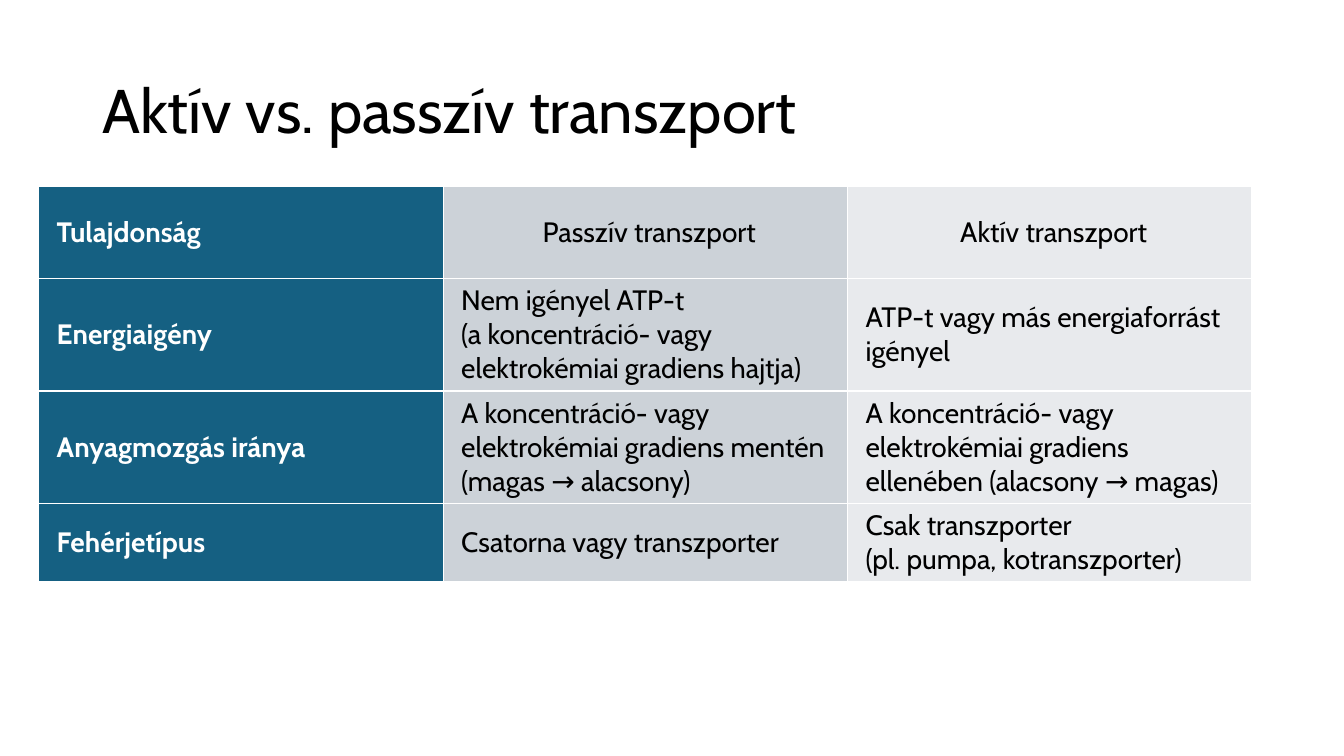
from lxml.etree import SubElement
from pptx import Presentation
from pptx.dml.color import RGBColor
from pptx.enum.text import MSO_ANCHOR, MSO_AUTO_SIZE, PP_ALIGN
from pptx.oxml.ns import qn
from pptx.util import Pt

FONT = "Cabin"
BLACK, WHITE = "000000", "FFFFFF"
COLUMN_FILLS = ["156082", "CCD2D8", "E8EAED"]
COLUMN_WIDTH = 288.9
ROW_HEIGHTS = [65.5, 59, 59, 47.5]
ROWS = [
    ["Tulajdonság", "Passzív transzport", "Aktív transzport"],
    [
        "Energiaigény",
        "Nem igényel ATP-t\n(a koncentráció- vagy elektrokémiai gradiens hajtja)",
        "ATP-t vagy más energiaforrást igényel",
    ],
    [
        "Anyagmozgás iránya",
        "A koncentráció- vagy elektrokémiai gradiens mentén (magas → alacsony)",
        "A koncentráció- vagy elektrokémiai gradiens ellenében (alacsony → magas)",
    ],
    [
        "Fehérjetípus",
        "Csatorna vagy transzporter",
        "Csak transzporter\n(pl. pumpa, kotranszporter)",
    ],
]


def color(value):
    return RGBColor.from_string(value)


def set_attributes(target, values):
    for name, value in values.items():
        setattr(target, name, value)


def format_paragraph(paragraph, size, text_color, bold=False, **layout):
    set_attributes(paragraph, layout)
    set_attributes(paragraph.font, {"name": FONT, "size": Pt(size), "bold": bold})
    paragraph.font.color.rgb = color(text_color)


def add_title(slide, text):
    title = slide.shapes.title
    set_attributes(title, {
        "left": Pt(66), "top": Pt(28.75), "width": Pt(828), "height": Pt(104.4),
    })
    frame = title.text_frame
    frame.text = text
    set_attributes(frame, {
        "vertical_anchor": MSO_ANCHOR.MIDDLE,
        "auto_size": MSO_AUTO_SIZE.NONE,
        "word_wrap": True,
    })
    format_paragraph(frame.paragraphs[0], 44, BLACK,
                     alignment=PP_ALIGN.LEFT, line_spacing=0.9)


def add_borders(cell):
    properties = cell._tc.get_or_add_tcPr()
    for side in ("lnL", "lnR", "lnT", "lnB"):
        line = SubElement(properties, qn(f"a:{side}"), w=str(Pt(1)))
        fill = SubElement(line, qn("a:solidFill"))
        SubElement(fill, qn("a:srgbClr"), val=WHITE)


def fill_cell(cell, text, fill_color, is_label, is_centered):
    add_borders(cell)
    cell.fill.solid()
    cell.fill.fore_color.rgb = color(fill_color)
    cell.vertical_anchor = MSO_ANCHOR.MIDDLE
    cell.text = text
    for paragraph in cell.text_frame.paragraphs:
        format_paragraph(
            paragraph, 20, WHITE if is_label else BLACK, is_label,
            alignment=PP_ALIGN.CENTER if is_centered else PP_ALIGN.LEFT,
        )
        properties = paragraph._p.get_or_add_pPr()
        properties.set("marL", str(Pt(5.65)))
        properties.set("indent", "0")


def add_comparison_table(slide):
    column_count = len(COLUMN_FILLS)
    table = slide.shapes.add_table(
        len(ROWS), column_count, Pt(27.7), Pt(133.4),
        Pt(COLUMN_WIDTH * column_count), Pt(sum(ROW_HEIGHTS)),
    ).table
    set_attributes(table, {"first_row": False, "horz_banding": False})
    for column in table.columns:
        column.width = Pt(COLUMN_WIDTH)
    for row, height in zip(table.rows, ROW_HEIGHTS):
        row.height = Pt(height)
    for row_index, texts in enumerate(ROWS):
        for column_index, (text, fill_color) in enumerate(zip(texts, COLUMN_FILLS)):
            is_label = column_index == 0
            is_centered = row_index == 0 and not is_label
            fill_cell(table.cell(row_index, column_index), text, fill_color,
                      is_label, is_centered)


def main():
    presentation = Presentation()
    set_attributes(presentation, {"slide_width": Pt(960), "slide_height": Pt(540)})
    slide = presentation.slides.add_slide(presentation.slide_layouts[5])
    add_title(slide, "Aktív vs. passzív transzport")
    add_comparison_table(slide)
    presentation.save("out.pptx")


if __name__ == "__main__":
    main()
